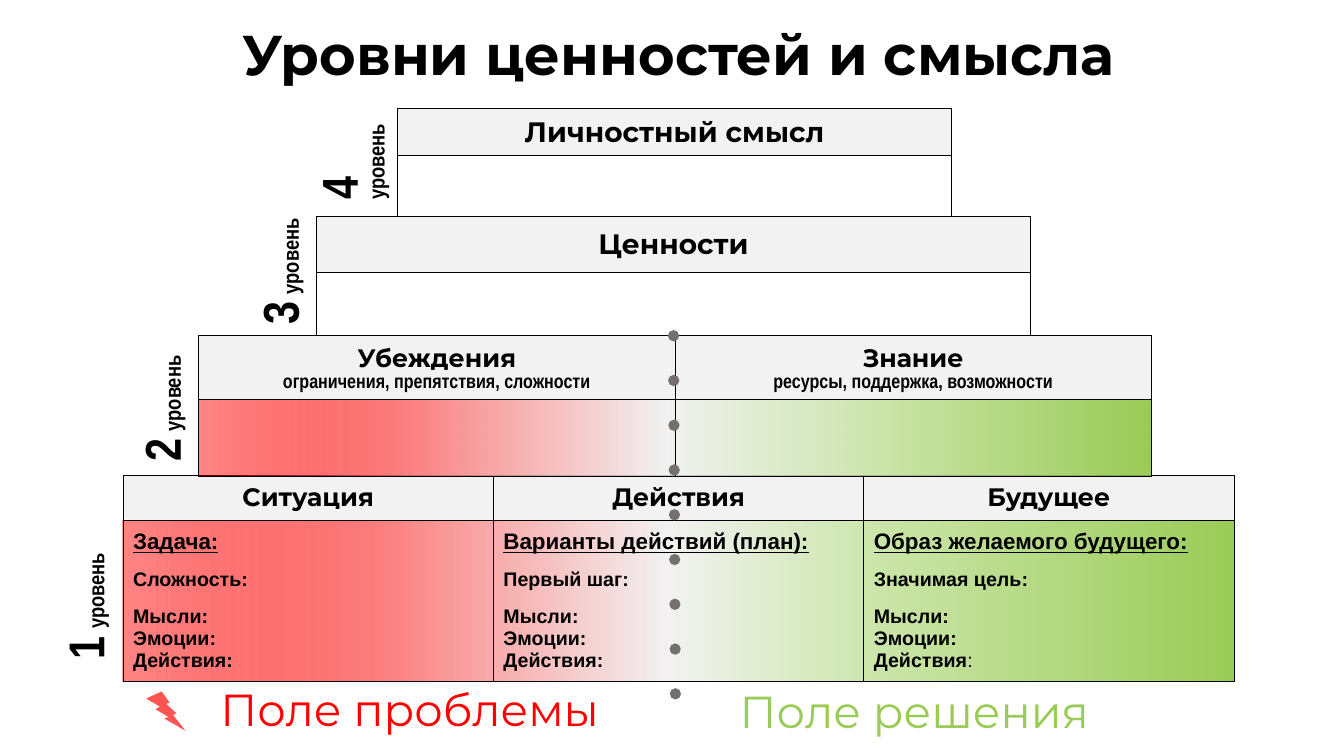
from lxml.etree import SubElement
from pptx import Presentation
from pptx.dml.color import RGBColor
from pptx.enum.shapes import MSO_CONNECTOR, MSO_SHAPE
from pptx.enum.text import MSO_ANCHOR, MSO_AUTO_SIZE, PP_ALIGN
from pptx.oxml.ns import qn
from pptx.util import Inches, Pt

BLACK = RGBColor(0x00, 0x00, 0x00)
RED = RGBColor(0xFF, 0x00, 0x00)
PINK = RGBColor(0xFB, 0x81, 0x81)
PALE = RGBColor(0xF2, 0xF2, 0xF2)
LIGHT_GREEN = RGBColor(0xCB, 0xE5, 0xA9)
GREEN = RGBColor(0x9A, 0xCB, 0x56)
GRAY = RGBColor(0x75, 0x70, 0x70)

HEADING_FONT = "Montserrat"
NARROW_FONT = "Arial Narrow"
BODY_FONT = "Arial"


def style(font, name, size, color=BLACK, bold=True):
    font.name, font.size, font.bold = name, Pt(size), bold
    font.color.rgb = color


def add_color(parent, color, alpha=None):
    node = SubElement(parent, qn("a:srgbClr"), val=str(color))
    if alpha:
        SubElement(node, qn("a:alpha"), val=str(alpha * 1000))


def add_text_box(slide, box, anchor=MSO_ANCHOR.MIDDLE):
    caption = slide.shapes.add_textbox(*map(Inches, box))
    frame = caption.text_frame
    frame.word_wrap = True
    frame.vertical_anchor = anchor
    frame.auto_size = MSO_AUTO_SIZE.SHAPE_TO_FIT_TEXT
    return caption, frame.paragraphs[0]


def add_heading(slide, box, text, size, color=BLACK, bold=True,
                anchor=MSO_ANCHOR.MIDDLE, spacing=None):
    _, line = add_text_box(slide, box, anchor)
    line.text = text
    line.alignment = PP_ALIGN.CENTER
    line.line_spacing = spacing
    style(line.font, HEADING_FONT, size, color, bold)


def add_level_label(slide, number, center_x, bottom, length, thickness):
    left = center_x - length / 2
    top = bottom - length / 2 - thickness / 2
    label, line = add_text_box(slide, (left, top, length, thickness))
    label.rotation = 270
    line.line_spacing = Pt(15)
    for text, size in ((str(number), 36), (" ", 24), ("уровень", 16)):
        run = line.add_run()
        run.text = text
        style(run.font, NARROW_FONT, size)


def add_gradient(slide, box, pink_at, green_at):
    band = slide.shapes.add_shape(MSO_SHAPE.RECTANGLE, *map(Inches, box))
    band.shadow.inherit = False
    band.line.fill.background()
    band.fill.gradient()
    band.fill.gradient_angle = 0
    stops = band.fill._fill._gradFill.find(qn("a:gsLst"))
    for stop in list(stops):
        stops.remove(stop)
    for position, color, alpha in ((0, RED, 47), (pink_at, PINK, None),
                                   (49, PALE, None), (green_at, LIGHT_GREEN, None),
                                   (100, GREEN, None)):
        add_color(SubElement(stops, qn("a:gs"), pos=str(position * 1000)), color, alpha)


def add_borders(cell):
    properties = cell._tc.get_or_add_tcPr()
    for side in ("lnL", "lnR", "lnT", "lnB"):
        border = SubElement(properties, qn(f"a:{side}"), w=str(Pt(0.75)))
        add_color(SubElement(border, qn("a:solidFill")), BLACK)


def fill_header(cell, title, subtitle, size):
    cell.fill.solid()
    cell.fill.fore_color.rgb = PALE
    frame = cell.text_frame
    frame.text = title
    style(frame.paragraphs[0].font, HEADING_FONT, size)
    if subtitle:
        line = frame.add_paragraph()
        line.text = subtitle
        style(line.font, NARROW_FONT, 14)
    for line in frame.paragraphs:
        line.alignment = PP_ALIGN.CENTER


def fill_prompts(cell, prompts):
    frame = cell.text_frame
    frame.text = "\n".join(prompts)
    for index, line in enumerate(frame.paragraphs):
        style(line.font, BODY_FONT, 14 if index else 16)
        line.font.underline = index == 0
        if index in (1, 2):
            line.space_before = Pt(10.35)


def add_tier(slide, box, header_height, headers, size, prompts=(), gradient=None):
    left, top, width, height = box
    body_height = height - header_height
    if gradient:
        add_gradient(slide, (left, top + header_height, width, body_height), *gradient)
    table = slide.shapes.add_table(2, len(headers), *map(Inches, box)).table
    table.first_row = table.horz_banding = False
    for row, row_height in zip(table.rows, (header_height, body_height)):
        row.height = Inches(row_height)
    for cell in table.iter_cells():
        add_borders(cell)
        cell.fill.background()
        cell.vertical_anchor = MSO_ANCHOR.MIDDLE
    for column, (title, subtitle) in enumerate(headers):
        table.columns[column].width = Inches(width / len(headers))
        fill_header(table.cell(0, column), title, subtitle, size)
    for column, lines in enumerate(prompts):
        fill_prompts(table.cell(1, column), lines)
    return table


def add_pyramid(slide):
    common = ["Мысли:", "Эмоции:", "Действия:"]
    prompts = [
        ["Задача:", "Сложность:", *common],
        ["Варианты действий (план):", "Первый шаг:", *common],
        ["Образ желаемого будущего:", "Значимая цель:", *common[:2], "Действия"],
    ]
    base = add_tier(slide, (1.22, 4.72, 11.02, 2.04), 0.44,
                    [("Ситуация", None), ("Действия", None), ("Будущее", None)],
                    18, prompts, (24, 68))
    colon = base.cell(1, 2).text_frame.paragraphs[-1].add_run()
    colon.text = ":"
    colon.font.bold = False
    add_tier(slide, (1.97, 3.33, 9.45, 1.39), 0.63,
             [("Убеждения", "ограничения, препятствия, сложности"),
              ("Знание", "ресурсы, поддержка, возможности")], 18, gradient=(22, 72))
    add_tier(slide, (3.14, 2.15, 7.08, 1.18), 0.55, [("Ценности", None)], 20)
    add_tier(slide, (3.94, 1.08, 5.5, 1.07), 0.46, [("Личностный смысл", None)], 20)

    for level in ((1, 1.03, 6.64, 1.49, 0.31), (2, 1.79, 4.68, 1.3, 0.31),
                  (3, 2.96, 3.32, 1.3, 0.31), (4, 3.65, 2.08, 1.17, 0.52)):
        add_level_label(slide, *level)


def add_divider(slide, start, end):
    divider = slide.shapes.add_connector(MSO_CONNECTOR.STRAIGHT, *map(Inches, start + end))
    divider.line.color.rgb = GRAY
    divider.line.width = Pt(8)
    outline = divider.line._get_or_add_ln()
    outline.set("cap", "rnd")
    SubElement(outline, qn("a:prstDash"), val="dot")
    SubElement(divider._element.spPr, qn("a:effectLst"))


def add_fields(slide, box):
    left, top, width, height = box
    add_heading(slide, (left + 0.13, top, 4.97, height), "Поле проблемы", 32, RED, False)
    add_heading(slide, (left + width - 5.48, top + 0.02, 5.48, height),
                "Поле решения", 32, GREEN, False)
    bolt = slide.shapes.add_shape(MSO_SHAPE.LIGHTNING_BOLT, Inches(left),
                                  Inches(top + 0.15), Inches(0.39), Inches(0.39))
    bolt.shadow.inherit = False
    bolt.line.fill.background()
    bolt.fill.solid()
    bolt.fill.fore_color.rgb = RED
    color = bolt._element.spPr.find(qn("a:solidFill"))[0]
    SubElement(color, qn("a:alpha"), val="67000")


def main():
    deck = Presentation()
    deck.slide_width, deck.slide_height = Inches(13.33), Inches(7.5)
    slide = deck.slides.add_slide(deck.slide_layouts[6])
    add_heading(slide, (2.08, 0.43, 9.3, 0.46), "Уровни ценностей и смысла", 40,
                anchor=MSO_ANCHOR.TOP, spacing=0.5)
    add_pyramid(slide)
    add_fields(slide, (1.45, 6.71, 10.36, 0.64))
    add_divider(slide, (6.68, 3.33), (6.7, 7.16))
    deck.save("out.pptx")


if __name__ == "__main__":
    main()
